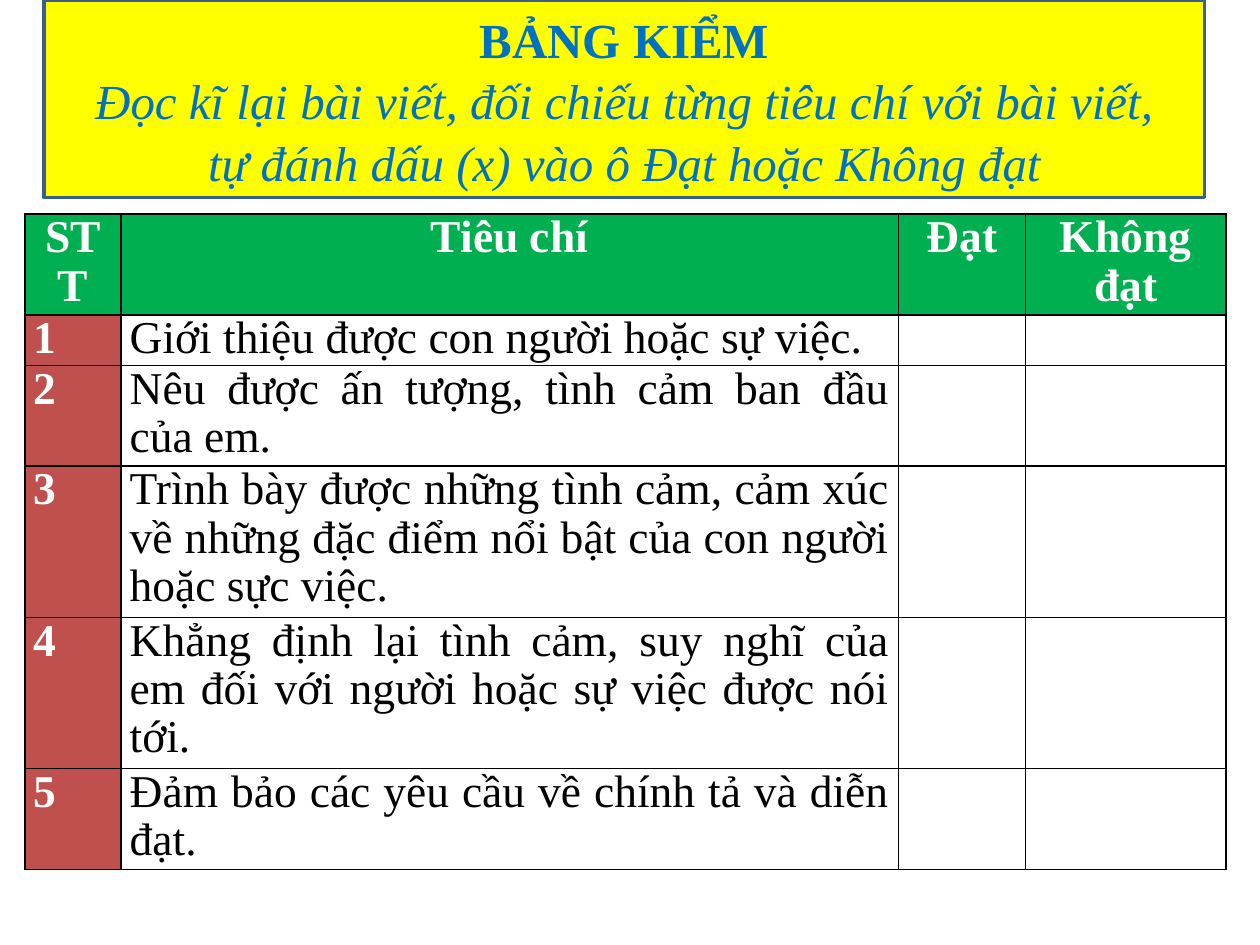
from pptx import Presentation
from pptx.util import Inches, Pt
from pptx.dml.color import RGBColor as RGB
from pptx.enum.shapes import MSO_SHAPE as Shape
from pptx.enum.text import PP_ALIGN as Align, MSO_ANCHOR as Anchor
from pptx.oxml import parse_xml
from pptx.oxml.ns import nsdecls

HEX = {"yellow": "FFFF00", "navy": "3A5F8C", "blue": "0070C0", "green": "00B050",
       "red": "C0504D", "white": "FFFFFF", "black": "000000"}
FONT = "Times New Roman"
TITLE = ["BẢNG KIỂM",
         "Đọc kĩ lại bài viết, đối chiếu từng tiêu chí với bài viết,",
         "tự đánh dấu (x) vào ô Đạt hoặc Không đạt"]
HEADS = ["STT", "Tiêu chí", "Đạt", "Không đạt"]
ITEMS = ["Giới thiệu được con người hoặc sự việc.",
         "Nêu được ấn tượng, tình cảm ban đầu của em.",
         "Trình bày được những tình cảm, cảm xúc về những đặc điểm nổi bật "
         "của con người hoặc sực việc.",
         "Khẳng định lại tình cảm, suy nghĩ của em đối với người hoặc sự việc "
         "được nói tới.",
         "Đảm bảo các yêu cầu về chính tả và diễn đạt."]
WIDTHS = [0.76, 6.17, 1.01, 1.59]
LINES = [2, 1, 2, 3, 3, 2]
STEP = 0.4


def color(name):
    return RGB.from_string(HEX[name])


def style(par, size, ink, align, gap, bold=False, italic=False):
    par.alignment = align
    par.line_spacing = gap
    for run in par.runs:
        font = run.font
        font.name, font.size = FONT, Pt(size)
        font.bold, font.italic = bold, italic
        font.color.rgb = color(ink)


def add_banner(slide):
    box = slide.shapes.add_shape(Shape.RECTANGLE, Inches(0.35), 0,
                                 Inches(9.21), Inches(1.57))
    box.shadow.inherit = False
    box.fill.solid()
    box.fill.fore_color.rgb = color("yellow")
    box.line.color.rgb = color("navy")
    box.line.width = Pt(2)
    frame = box.text_frame
    frame.word_wrap = True
    frame.vertical_anchor = Anchor.MIDDLE
    frame.text = "\n".join(TITLE)
    for i, par in enumerate(frame.paragraphs):
        style(par, 28, "blue", Align.CENTER, 1.05, bold=i == 0, italic=i > 0)


def add_edges(cell):
    props = cell._tc.get_or_add_tcPr()
    for i, side in enumerate(("lnL", "lnR", "lnT", "lnB")):
        props.insert(i, parse_xml(
            f'<a:{side} {nsdecls("a")} w="12700"><a:solidFill>'
            f'<a:srgbClr val="{HEX["black"]}"/></a:solidFill></a:{side}>'))


def fill_cell(cell, text, back, ink, align, bold):
    cell.margin_left = cell.margin_right = Inches(0.07)
    cell.margin_top = cell.margin_bottom = 0
    cell.fill.solid()
    cell.fill.fore_color.rgb = color(back)
    add_edges(cell)
    if text:
        cell.text_frame.text = text
        style(cell.text_frame.paragraphs[0], 26, ink, align, 0.96, bold)


def add_grid(slide):
    rows = [HEADS] + [[str(i), item, "", ""] for i, item in enumerate(ITEMS, 1)]
    grid = slide.shapes.add_table(len(rows), len(HEADS), Inches(0.2), Inches(1.7),
                                  Inches(sum(WIDTHS)), Inches(STEP * sum(LINES))).table
    for col, width in zip(grid.columns, WIDTHS):
        col.width = Inches(width)
    for row, count in zip(grid.rows, LINES):
        row.height = Inches(STEP * count)
    for r, row in enumerate(rows):
        for c, text in enumerate(row):
            if r == 0:
                look = "green", "white", Align.CENTER, True
            elif c == 0:
                look = "red", "white", Align.LEFT, True
            else:
                look = "white", "black", Align.JUSTIFY, False
            fill_cell(grid.cell(r, c), text, *look)


def main():
    deck = Presentation()
    deck.slide_width, deck.slide_height = Inches(10), Inches(7.5)
    slide = deck.slides.add_slide(deck.slide_layouts[6])
    add_banner(slide)
    add_grid(slide)
    deck.save("out.pptx")


if __name__ == "__main__":
    main()
